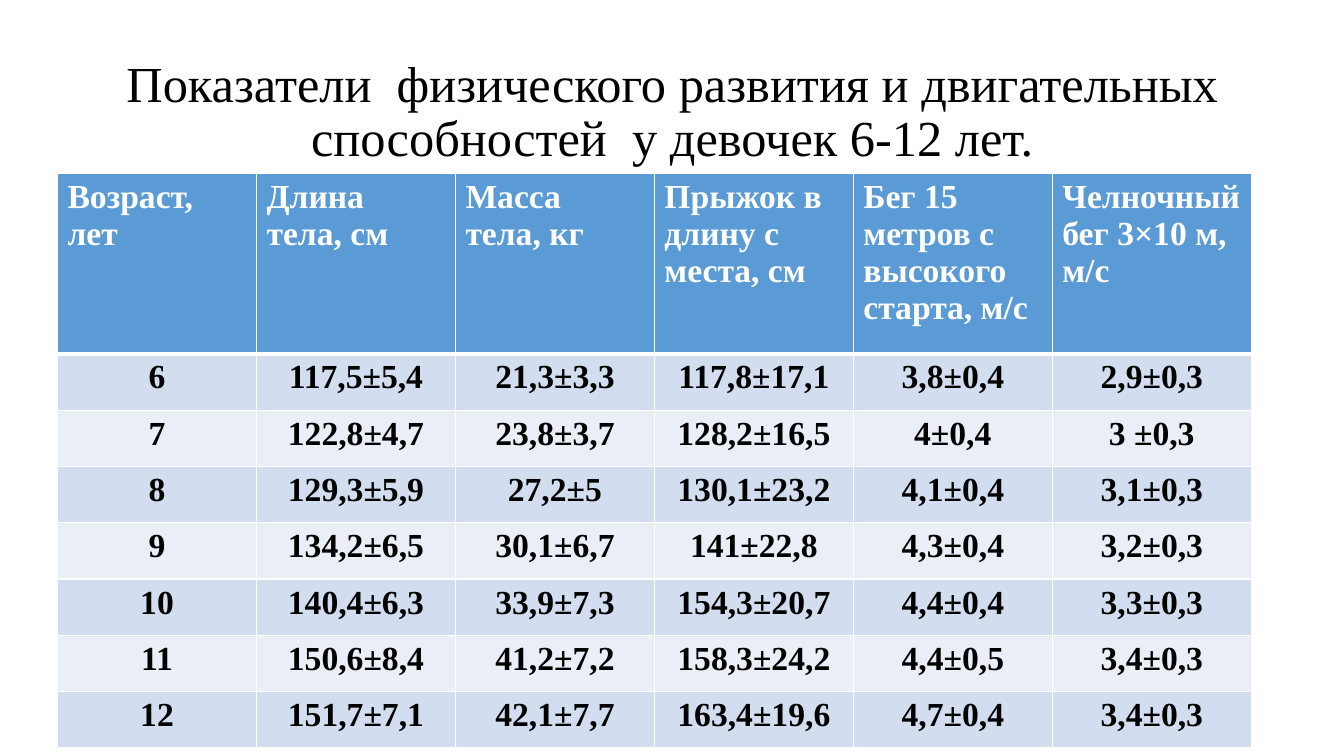
from lxml.etree import SubElement
from pptx import Presentation
from pptx.dml.color import RGBColor
from pptx.enum.text import MSO_ANCHOR, PP_ALIGN
from pptx.oxml.ns import qn
from pptx.util import Inches, Pt

WIDTH, HEIGHT = Inches(13.33), Inches(7.5)
BLACK = RGBColor(0x00, 0x00, 0x00)
WHITE = RGBColor(0xFF, 0xFF, 0xFF)
BLUE = RGBColor(0x5B, 0x9B, 0xD5)
BANDS = (RGBColor(0xEA, 0xEF, 0xF7), RGBColor(0xD2, 0xDE, 0xEF))

TITLE = "Показатели  физического развития и двигательных способностей  у девочек 6-12 лет."
HEADERS = (
    "Возраст, лет",
    "Длина тела, см",
    "Масса тела, кг",
    "Прыжок в длину с места, см",
    "Бег 15 метров с высокого старта, м/с",
    "Челночный бег 3×10 м, м/с",
)
MEASUREMENTS = (
    ("6", "117,5±5,4", "21,3±3,3", "117,8±17,1", "3,8±0,4", "2,9±0,3"),
    ("7", "122,8±4,7", "23,8±3,7", "128,2±16,5", "4±0,4", "3 ±0,3"),
    ("8", "129,3±5,9", "27,2±5", "130,1±23,2", "4,1±0,4", "3,1±0,3"),
    ("9", "134,2±6,5", "30,1±6,7", "141±22,8", "4,3±0,4", "3,2±0,3"),
    ("10", "140,4±6,3", "33,9±7,3", "154,3±20,7", "4,4±0,4", "3,3±0,3"),
    ("11", "150,6±8,4", "41,2±7,2", "158,3±24,2", "4,4±0,5", "3,4±0,3"),
    ("12", "151,7±7,1", "42,1±7,7", "163,4±19,6", "4,7±0,4", "3,4±0,3"),
)

TITLE_FONT = {"name": "Times New Roman", "size": Pt(36), "bold": False}
CELL_FONT = {"name": "Times New Roman", "size": Pt(24), "bold": True}


def across(percent):
    """Return a share of the slide width."""
    return int(WIDTH * percent / 100)


def down(percent):
    """Return a share of the slide height."""
    return int(HEIGHT * percent / 100)


def write(frame, text, font, color, **para_format):
    """Put one formatted paragraph into a text frame."""
    para = frame.paragraphs[0]
    for name, value in para_format.items():
        setattr(para, name, value)
    span = para.add_run()
    span.text = text
    for name, value in font.items():
        setattr(span.font, name, value)
    span.font.color.rgb = color


def add_title(page):
    """Add the centred heading above the table."""
    box = page.shapes.add_textbox(across(6.9), down(5.33), across(86.27), down(19.33))
    frame = box.text_frame
    frame.word_wrap = True
    frame.vertical_anchor = MSO_ANCHOR.MIDDLE
    write(frame, TITLE, TITLE_FONT, BLACK, alignment=PP_ALIGN.CENTER, line_spacing=0.9)


def set_borders(cell, **widths):
    """Draw white cell borders with the given widths in points."""
    properties = cell._tc.get_or_add_tcPr()
    for side, width in widths.items():
        line = SubElement(properties, qn(f"a:ln{side}"), w=str(Pt(width)))
        fill = SubElement(line, qn("a:solidFill"))
        SubElement(fill, qn("a:srgbClr"), val=str(WHITE))


def fill_cell(cell, text, row):
    """Fill a header cell or a banded measurement cell."""
    is_header = row == 0
    set_borders(cell, L=1, R=1, T=3 if row == 1 else 1, B=3 if is_header else 1)
    cell.fill.solid()
    cell.fill.fore_color.rgb = BLUE if is_header else BANDS[row % 2]
    write(
        cell.text_frame,
        text,
        CELL_FONT,
        WHITE if is_header else BLACK,
        alignment=PP_ALIGN.LEFT if is_header else PP_ALIGN.CENTER,
    )


def add_measurements(page):
    """Add the table of measurements by age."""
    rows = (HEADERS, *MEASUREMENTS)
    table = page.shapes.add_table(
        len(rows), len(HEADERS), across(4.28), down(22.93), across(88.82), down(76)
    ).table
    for row, texts in enumerate(rows):
        table.rows[row].height = down(7.45 if row else 23.87)
        for column, text in enumerate(texts):
            fill_cell(table.cell(row, column), text, row)


def main():
    """Build and save the slide."""
    deck = Presentation()
    deck.slide_width, deck.slide_height = WIDTH, HEIGHT
    page = deck.slides.add_slide(deck.slide_layouts[6])
    add_title(page)
    add_measurements(page)
    deck.save("out.pptx")


if __name__ == "__main__":
    main()
